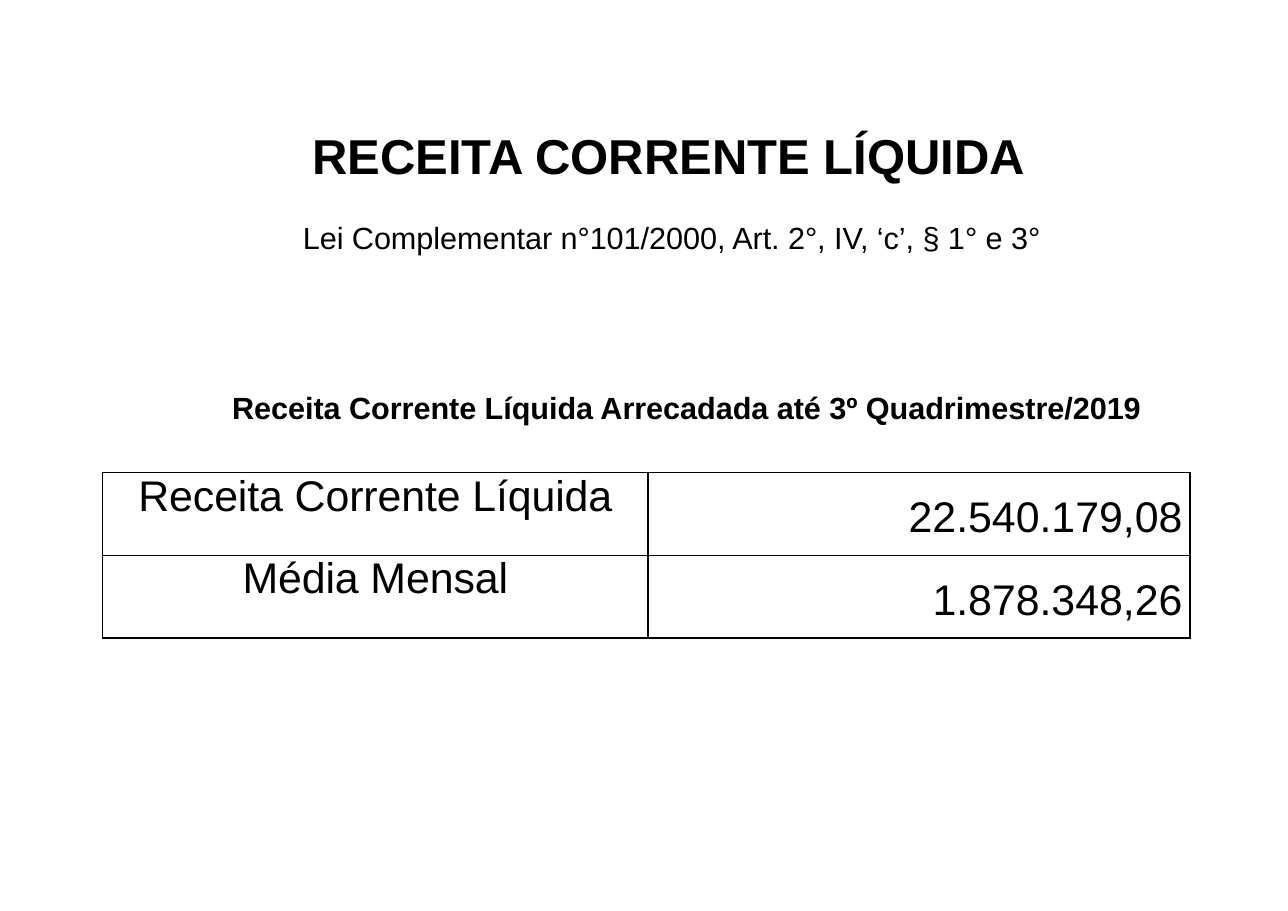
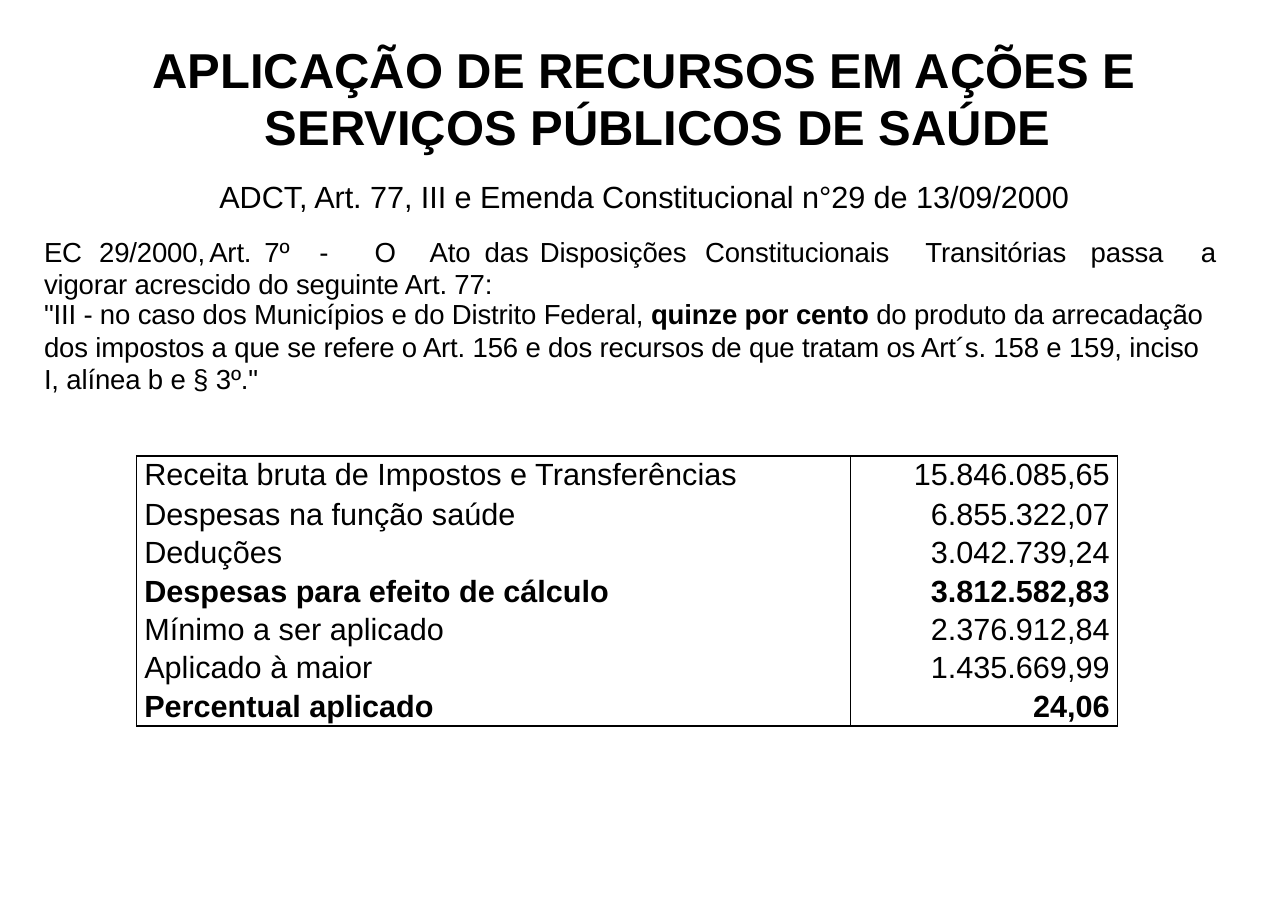
"""Builds two slides on net current revenue and health spending."""
from lxml.etree import SubElement
from pptx import Presentation
from pptx.dml.color import RGBColor
from pptx.enum.text import MSO_ANCHOR as Anchor, PP_ALIGN as Align
from pptx.oxml.ns import qn
from pptx.util import Pt

BLACK = RGBColor(0, 0, 0)
FONT = "Arial"
SLIDE_SIZE = (841.7, 595.4)
CELL_MARGIN = 5
TITLE = {"size": 32, "bold": True}
LAW = {"size": 20, "align": Align.CENTER, "space_before": Pt(1.1)}
QUOTE = {"size": 18, "tracking": -10}
LABEL_TABS = (36.7, 117.4, 156.2, 183.6, 200.9, 225.4, 262.8, 302.4, 427.7, 544.3, 649.4, 707.8)

REVENUE = {
    "boxes": [
        ((204, 69, 490, 52), [
            ("RECEITA CORRENTE LÍQUIDA", {**TITLE, "line_spacing": 1.32, "space_before": Pt(0.9)})]),
        ((108.7, 142, 660, 52), [
            ("Lei Complementar n°101/2000, Art. 2°, IV, ‘c’, § 1° e 3°", {**LAW, "tracking": -5})]),
        ((151.7, 253.4, 610, 26), [
            ("Receita Corrente Líquida Arrecadada até 3º Quadrimestre/2019",
             {"size": 20, "bold": True, "space_before": Pt(1), "tracking": -5})]),
    ],
    "table": {
        "at": (67, 308.9), "columns": (356.4, 354.2), "heights": (54, 54), "inner_lines": True,
        "rows": [("Receita Corrente Líquida", "22.540.179,08", False),
                 ("Média Mensal", "1.878.348,26", False)],
        "label": {"size": 28, "align": Align.CENTER, "space_before": Pt(0.5), "tracking": -5},
        "value": {"size": 28, "align": Align.RIGHT, "line_spacing": 1.15},
        "value_anchor": Anchor.MIDDLE,
    },
}
HEALTH = {
    "boxes": [
        ((98, 26.6, 660, 77), [
            ("APLICAÇÃO DE RECURSOS EM AÇÕES E\vSERVIÇOS PÚBLICOS DE SAÚDE",
             {**TITLE, "line_spacing": Pt(36.9), "space_before": Pt(6.5), "indent": (75, -73.5)})]),
        ((28.8, 115.2, 784, 144), [
            ("ADCT, Art. 77, III e Emenda Constitucional n°29 de 13/09/2000", {**LAW, "tracking": -5}),
            ("EC\t29/2000,\tArt.\t7º\t-\tO\tAto\tdas\tDisposições\tConstitucionais\tTransitórias"
             "\tpassa\ta\vvigorar acrescido do seguinte Art. 77:",
             {**QUOTE, "line_spacing": Pt(20.8), "space_before": Pt(14.5), "tabs": LABEL_TABS}),
            ("\"III - no caso dos Municípios e do Distrito Federal, **quinze por cento** "
             "do produto da arrecadação", {**QUOTE, "line_spacing": Pt(19.6)}),
            ("dos impostos a que se refere o Art. 156 e dos recursos de que tratam os Art´s. "
             "158 e 159, inciso\vI, alínea b e § 3º.\"",
             {**QUOTE, "line_spacing": Pt(20.6), "space_before": Pt(1.1)})]),
    ],
    "table": {
        "at": (89.3, 298), "columns": (466.6, 174.4), "heights": (26,) + (25.1,) * 6,
        "inner_lines": False,
        "rows": [("Receita bruta de Impostos e Transferências", "15.846.085,65", False),
                 ("Despesas na função saúde", "6.855.322,07", False),
                 ("Deduções", "3.042.739,24", False),
                 ("Despesas para efeito de cálculo", "3.812.582,83", True),
                 ("Mínimo a ser aplicado", "2.376.912,84", False),
                 ("Aplicado à maior", "1.435.669,99", False),
                 ("Percentual aplicado", "24,06", True)],
        "label": {"size": 20, "line_spacing": Pt(23.5)},
        "value": {"size": 20, "line_spacing": Pt(23.5), "align": Align.RIGHT},
        "value_anchor": Anchor.TOP,
    },
}


def set_all(target, values):
    """Set every attribute of the dict on the target."""
    for key, value in values.items():
        setattr(target, key, value)


def write(paragraph, text, style):
    """Fill a paragraph; ** switches bold and a vertical tab breaks the line."""
    spacing = {"alignment": style.get("align", Align.LEFT),
               "line_spacing": style.get("line_spacing", 1.0),
               "space_before": style.get("space_before", Pt(0))}
    set_all(paragraph, spacing)
    properties = paragraph._p.get_or_add_pPr()
    for key, length in zip(("marL", "indent"), style.get("indent", (0, 0))):
        properties.set(key, str(Pt(length)))
    if "tabs" in style:
        stops = SubElement(properties, qn("a:tabLst"))
        for stop in style["tabs"]:
            SubElement(stops, qn("a:tab"), pos=str(Pt(stop)), algn="l")
    for line_number, line in enumerate(text.split("\v")):
        if line_number:
            paragraph.add_line_break()
        for part_number, part in enumerate(line.split("**")):
            run = paragraph.add_run()
            run.text = part
            set_all(run.font, {"name": FONT, "size": Pt(style["size"]),
                               "bold": style.get("bold", False) or part_number % 2 == 1})
            run.font.color.rgb = BLACK
            run._r.get_or_add_rPr().set("spc", str(style.get("tracking", 0)))


def add_text(slide, area, paragraphs):
    """Add a text box holding the given paragraphs."""
    frame = slide.shapes.add_textbox(*map(Pt, area)).text_frame
    set_all(frame, {"word_wrap": True, "margin_left": 0, "margin_right": 0,
                    "margin_top": Pt(0.9), "margin_bottom": 0})
    for number, (text, style) in enumerate(paragraphs):
        write(frame.add_paragraph() if number else frame.paragraphs[0], text, style)


def draw_borders(cell, visible):
    """Give the cell black lines on the visible sides only."""
    properties = cell._tc.get_or_add_tcPr()
    for side in "LRTB":
        line = SubElement(properties, qn(f"a:ln{side}"), w=str(Pt(1)))
        if side in visible:
            fill = SubElement(line, qn("a:solidFill"))
            SubElement(fill, qn("a:srgbClr"), val=str(BLACK))
        else:
            SubElement(line, qn("a:noFill"))


def add_figures(slide, data):
    """Add the table of labels and amounts."""
    rows, columns, heights = data["rows"], data["columns"], data["heights"]
    table = slide.shapes.add_table(len(rows), len(columns), *map(Pt, data["at"]),
                                   Pt(sum(columns)), Pt(sum(heights))).table
    set_all(table, {"first_row": False, "horz_banding": False})
    for column, width in zip(table.columns, columns):
        column.width = Pt(width)
    for number, (label, amount, bold) in enumerate(rows):
        table.rows[number].height = Pt(heights[number])
        visible = "LR"
        if data["inner_lines"] or number == 0:
            visible += "T"
        if data["inner_lines"] or number == len(rows) - 1:
            visible += "B"
        parts = ((label, data["label"], Anchor.TOP), (amount, data["value"], data["value_anchor"]))
        for cell, (text, style, anchor) in zip(table.rows[number].cells, parts):
            set_all(cell, {"margin_left": Pt(CELL_MARGIN), "margin_right": Pt(CELL_MARGIN),
                           "margin_top": 0, "margin_bottom": 0, "vertical_anchor": anchor})
            draw_borders(cell, visible)
            cell.fill.background()
            write(cell.text_frame.paragraphs[0], text, {**style, "bold": bold})


def main():
    """Build and save the presentation."""
    deck = Presentation()
    deck.slide_width, deck.slide_height = map(Pt, SLIDE_SIZE)
    for content in (REVENUE, HEALTH):
        slide = deck.slides.add_slide(deck.slide_layouts[6])
        for area, paragraphs in content["boxes"]:
            add_text(slide, area, paragraphs)
        add_figures(slide, content["table"])
    deck.save("out.pptx")


if __name__ == "__main__":
    main()
